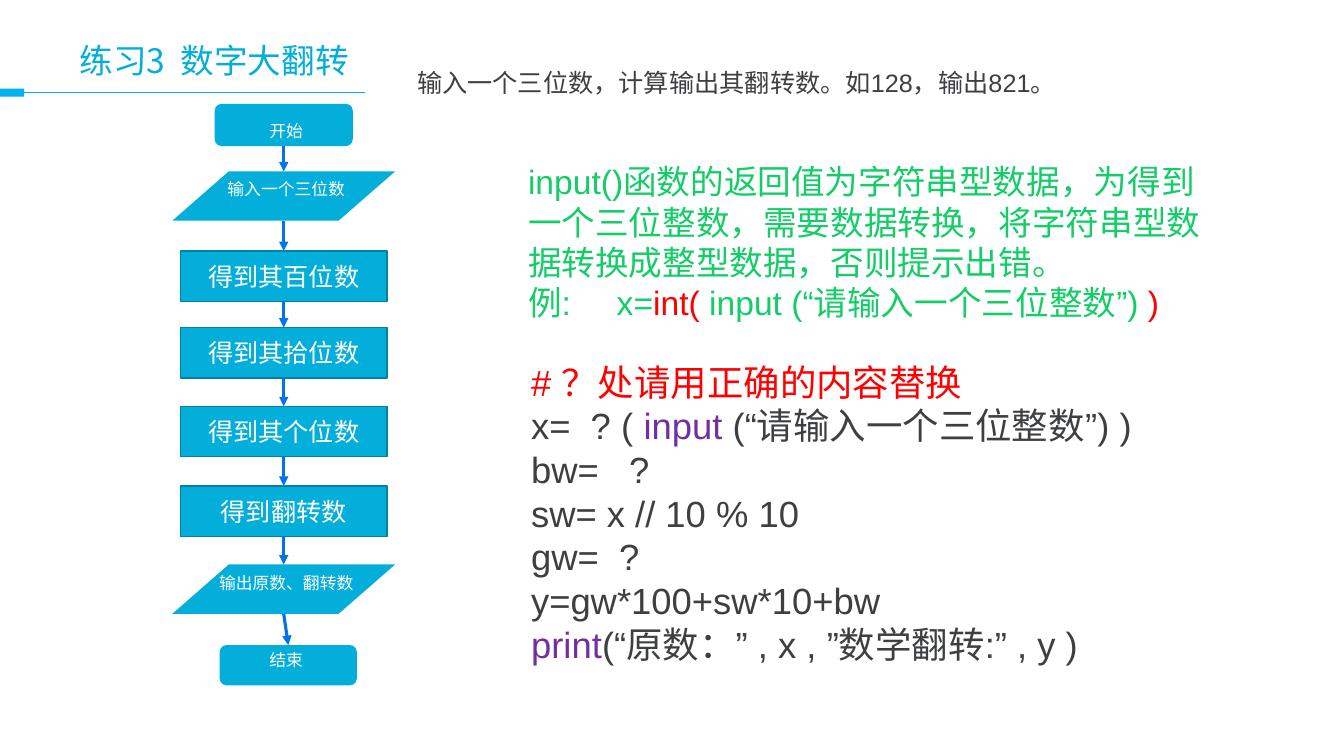
from dataclasses import dataclass
from itertools import pairwise
from typing import Any

import lxml.etree
import pptx
import pptx.dml.color
import pptx.enum.shapes
import pptx.enum.text
import pptx.oxml.ns
import pptx.util

COLORS = {
    "cyan": "04AEDA", "cyan edge": "0381A1", "sky": "00B0F0", "arrow": "0072EA",
    "green": "14CD68", "red": "FF0000", "ink": "3D3F41", "purple": "7030A0",
    "white": "FFFFFF",
}
SLIDE_WIDTH, SLIDE_HEIGHT = pptx.util.Inches(13.33), pptx.util.Inches(7.5)
COLUMN, ROW = SLIDE_WIDTH / 100, SLIDE_HEIGHT / 100
FLOW_CENTER, LABEL_CENTER = 21.11, 21.3
LABEL_WIDTH, LABEL_HEIGHT = 14.55, 4
LINE_HEIGHT = 1.2

KINDS = pptx.enum.shapes.MSO_SHAPE
ALIGN = pptx.enum.text.PP_ALIGN
MIDDLE = pptx.enum.text.MSO_ANCHOR.MIDDLE
qn = pptx.oxml.ns.qn


@dataclass
class Piece:
    text: str
    color: str
    spacing: int = 0


@dataclass
class Box:
    left: float
    top: float
    width: float
    height: float

    def emu(self) -> tuple[int, int, int, int]:
        return (round(self.left * COLUMN), round(self.top * ROW),
                round(self.width * COLUMN), round(self.height * ROW))


@dataclass
class Step:
    text: str
    kind: Any
    top: float
    width: float = 15.38
    height: float = 6.67
    label_top: float | None = None
    center: float = FLOW_CENTER

    def box(self) -> Box:
        return Box(self.center - self.width / 2, self.top, self.width, self.height)


STEPS = [
    Step("开始", KINDS.ROUNDED_RECTANGLE, 13.73, 10.28, 5.6, 15.33),
    Step("输入一个三位数", KINDS.PARALLELOGRAM, 22.67, 16.58, 6.53, 22.93),
    Step("得到其百位数", KINDS.RECTANGLE, 33.2),
    Step("得到其拾位数", KINDS.RECTANGLE, 43.33),
    Step("得到其个位数", KINDS.RECTANGLE, 53.73),
    Step("得到翻转数", KINDS.RECTANGLE, 64.27),
    Step("输出原数、翻转数", KINDS.PARALLELOGRAM, 74.67, 16.58, 6.53, 75.07),
    Step("结束", KINDS.ROUNDED_RECTANGLE, 85.33, 10.2, 5.33, 85.33, 21.45),
]
HEADING = [[Piece("练习3", "cyan"), Piece(" ", "cyan", 540), Piece("数字大翻转", "cyan")]]
TASK = [[Piece("输入一个三位数，计算输出其翻转数。如128，输出821。", "ink")]]
EXPLANATION = [
    [Piece("input()函数的返回值为字符串型数据，为得到一个三位整数，需要数据转换，"
           "将字符串型数据转换成整型数据，否则提示出错。", "green")],
    [Piece("例:\tx=", "green"), Piece("int( ", "red"),
     Piece("input (“请输入一个三位整数”)", "green"), Piece(" )", "red")],
]
CODE = [
    [Piece("# ？处请用正确的内容替换", "red")],
    [Piece("x=  ? ( ", "ink"), Piece("input", "purple"),
     Piece(" (“请输入一个三位整数”) )", "ink")],
    [Piece("bw=   ?", "ink")],
    [Piece("sw= x // 10 % 10", "ink")],
    [Piece("gw=  ?", "ink")],
    [Piece("y=gw*100+sw*10+bw", "ink")],
    [Piece("print", "purple"), Piece("(“原数：” , x , ”数学翻转:” , y )", "ink")],
]


def rgb(color: str) -> pptx.dml.color.RGBColor:
    return pptx.dml.color.RGBColor.from_string(COLORS[color])


def apply(target: Any, values: dict[str, Any]) -> None:
    for attribute, value in values.items():
        setattr(target, attribute, value)


def write(frame: Any, paragraphs: list[list[Piece]], size: float,
          align: Any = ALIGN.LEFT, font: str = "Arial", anchor: Any = None) -> None:
    apply(frame, {"word_wrap": True, "vertical_anchor": anchor})
    for index, pieces in enumerate(paragraphs):
        paragraph = frame.paragraphs[0] if index == 0 else frame.add_paragraph()
        apply(paragraph, {"alignment": align,
                          "line_spacing": pptx.util.Pt(size * LINE_HEIGHT)})
        if any("\t" in piece.text for piece in pieces):
            stops = lxml.etree.SubElement(paragraph._p.get_or_add_pPr(), qn("a:tabLst"))
            lxml.etree.SubElement(stops, qn("a:tab"), algn="l",
                                  pos=str(pptx.util.Inches(0.88)))
        for piece in pieces:
            run = paragraph.add_run()
            run.text = piece.text
            apply(run.font, {"size": pptx.util.Pt(size), "name": font})
            run.font.color.rgb = rgb(piece.color)
            properties = run._r.get_or_add_rPr()
            properties.set("lang", "zh-CN")
            if piece.spacing:
                properties.set("spc", str(piece.spacing))
            lxml.etree.SubElement(properties, qn("a:ea"), typeface=font)


def add_text(slide: Any, box: Box, paragraphs: list[list[Piece]], size: float,
             align: Any = ALIGN.LEFT) -> None:
    write(slide.shapes.add_textbox(*box.emu()).text_frame, paragraphs, size, align)


def add_block(slide: Any, kind: Any, box: Box, fill: str) -> Any:
    block = slide.shapes.add_shape(kind, *box.emu())
    block.shadow.inherit = False
    block.fill.solid()
    block.fill.fore_color.rgb = rgb(fill)
    block.line.fill.background()
    return block


def add_line(slide: Any, start: tuple[float, float], end: tuple[float, float],
             color: str, weight: float) -> Any:
    ends = [round(value * unit) for point in (start, end)
            for value, unit in zip(point, (COLUMN, ROW))]
    line = slide.shapes.add_connector(pptx.enum.shapes.MSO_CONNECTOR.STRAIGHT, *ends)
    line.line.color.rgb = rgb(color)
    line.line.width = pptx.util.Pt(weight)
    lxml.etree.SubElement(line._element.spPr, qn("a:effectLst"))
    return line


def add_step(slide: Any, step: Step) -> Any:
    block = add_block(slide, step.kind, step.box(), "cyan")
    text = [[Piece(step.text, "white")]]
    if step.kind == KINDS.PARALLELOGRAM:
        block.adjustments[0] = 1.145
    if step.label_top is None:
        block.line.color.rgb = rgb("cyan edge")
        block.line.width = pptx.util.Pt(1)
        write(block.text_frame, text, 18, ALIGN.CENTER, anchor=MIDDLE)
    else:
        label = Box(LABEL_CENTER - LABEL_WIDTH / 2, step.label_top,
                    LABEL_WIDTH, LABEL_HEIGHT)
        add_text(slide, label, text, 12, ALIGN.CENTER)
    return block


def add_flow(slide: Any) -> None:
    """Draw the steps and join each to the next with an arrow."""
    blocks = [add_step(slide, step) for step in STEPS]
    for (upper, source), (lower, target) in pairwise(zip(STEPS, blocks)):
        arrow = add_line(slide, (upper.center, upper.top + upper.height),
                         (lower.center, lower.top), "arrow", 2.25)
        lxml.etree.SubElement(arrow.line._get_or_add_ln(), qn("a:tailEnd"),
                              type="triangle")
        if upper.kind != KINDS.PARALLELOGRAM:
            arrow.begin_connect(source, 2)
        if lower.kind != KINDS.PARALLELOGRAM:
            arrow.end_connect(target, 0)


def main() -> None:
    deck = pptx.Presentation()
    apply(deck, {"slide_width": SLIDE_WIDTH, "slide_height": SLIDE_HEIGHT})
    slide = deck.slides.add_slide(deck.slide_layouts[5])
    add_line(slide, (27.15, 12.27), (1.73, 12.27), "sky", 0.75)
    add_block(slide, KINDS.RECTANGLE, Box(0, 11.73, 1.8, 1.07), "sky")
    heading = slide.shapes.title
    apply(heading, dict(zip(("left", "top", "width", "height"),
                            Box(5.18, 3.73, 90, 8.4).emu())))
    write(heading.text_frame, HEADING, 24, font="Noto Sans CJK SC", anchor=MIDDLE)
    add_text(slide, Box(30.3, 8.27, 59.4, 5.33), TASK, 18)
    add_text(slide, Box(38.55, 20.67, 51.83, 22.93), EXPLANATION, 24)
    add_text(slide, Box(38.78, 46.93, 59.78, 42.13), CODE, 26)
    add_flow(slide)
    deck.save("out.pptx")


if __name__ == "__main__":
    main()
